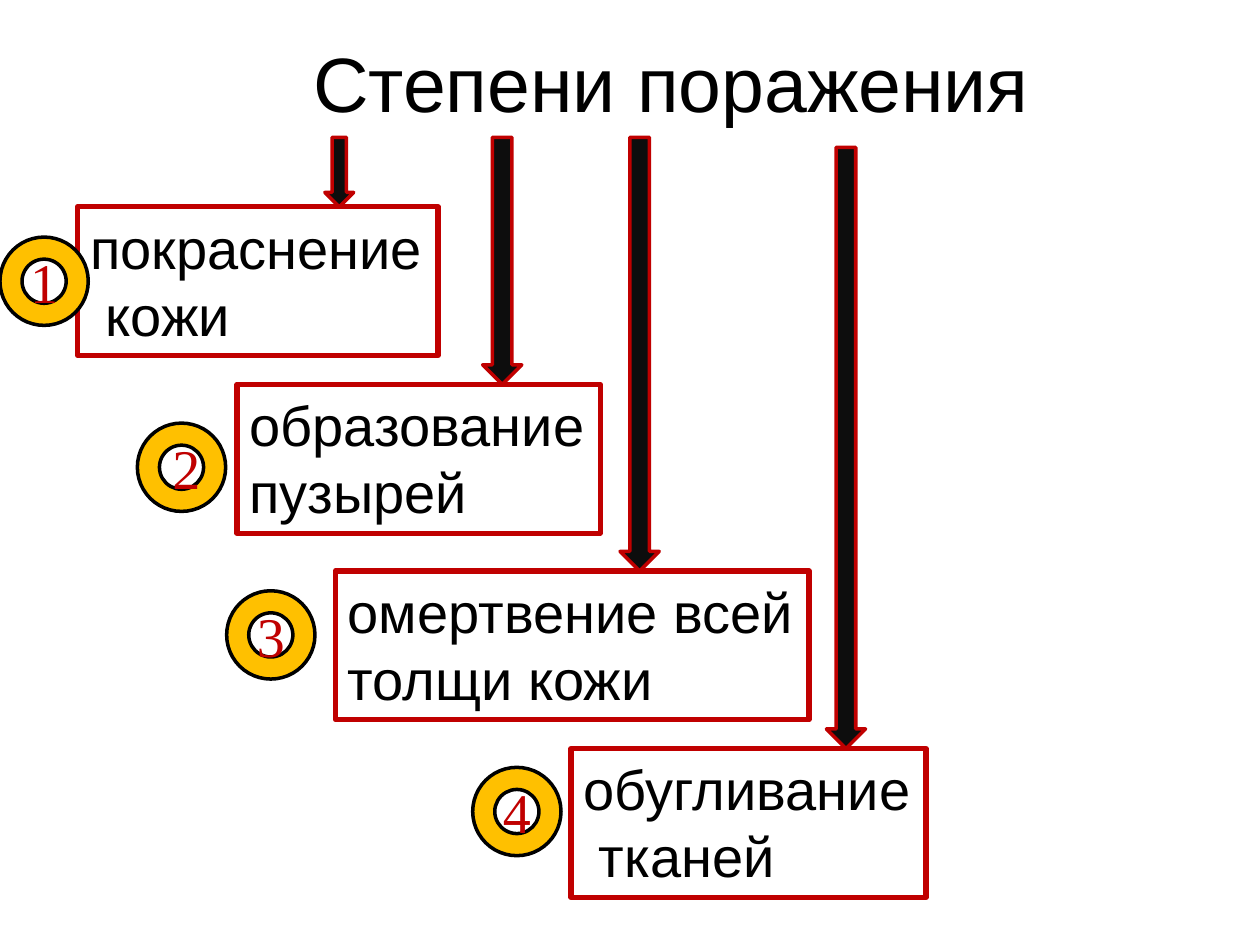
from dataclasses import dataclass

from pptx import Presentation
from pptx.dml.color import RGBColor
from pptx.enum import shapes, text
from pptx.util import Cm, Pt


@dataclass(frozen=True)
class Theme:
    ink: RGBColor = RGBColor(0x00, 0x00, 0x00)
    paper: RGBColor = RGBColor(0xFF, 0xFF, 0xFF)
    accent: RGBColor = RGBColor(0xC0, 0x00, 0x00)
    arrow: RGBColor = RGBColor(0x0D, 0x0D, 0x0D)
    badge: RGBColor = RGBColor(0xFF, 0xC0, 0x00)
    label_font: str = "Arial"
    number_font: str = "Times New Roman"
    title_size: int = 44
    label_size: int = 32


@dataclass(frozen=True)
class Degree:
    lines: tuple[str, str]
    left: float
    top: float
    width: float
    arrow_left: float
    arrow_top: float
    arrow_width: float
    badge_left: float
    badge_top: float
    badge_align: text.PP_ALIGN = text.PP_ALIGN.CENTER


THEME = Theme()
BOX_HEIGHT = 3.0
BADGE_SIZE = 1.78
DEGREES = (
    Degree(("покраснение", " кожи"), 1.57, 4.17, 7.26, 6.55, 2.77, 0.58, 0, 4.78),
    Degree(("образование", "пузырей"), 4.78, 7.75, 7.32, 9.73, 2.77, 0.79, 2.77, 8.53,
           text.PP_ALIGN.RIGHT),
    Degree(("омертвение всей", "толщи кожи"), 6.76, 11.51, 9.55, 12.5, 2.77, 0.79, 4.57, 11.91),
    Degree(("обугливание", " тканей"), 11.51, 15.09, 7.16, 16.66, 2.97, 0.79, 9.53, 15.47),
)


def add_outlined(slide, kind, left: float, top: float, width: float, height: float,
                 fill: RGBColor, line: RGBColor, weight: float):
    shape = slide.shapes.add_shape(kind, Cm(left), Cm(top), Cm(width), Cm(height))
    shape.shadow.inherit = False
    shape.fill.solid()
    shape.fill.fore_color.rgb = fill
    shape.line.color.rgb = line
    shape.line.width = Pt(weight)
    return shape


def format_paragraph(paragraph, font_name: str, size: int, color: RGBColor, align) -> None:
    paragraph.alignment = align
    paragraph.font.name = font_name
    paragraph.font.size = Pt(size)
    paragraph.font.color.rgb = color


def add_title(slide, wording: str) -> None:
    title = slide.shapes.title
    title.left, title.top, title.width, title.height = Cm(5.56), Cm(0.58), Cm(15.95), Cm(2.13)
    title.fill.solid()
    title.fill.fore_color.rgb = THEME.paper
    frame = title.text_frame
    frame.text = wording
    frame.auto_size = text.MSO_AUTO_SIZE.NONE
    frame.vertical_anchor = text.MSO_ANCHOR.TOP
    format_paragraph(frame.paragraphs[0], THEME.label_font, THEME.title_size, THEME.ink,
                     text.PP_ALIGN.CENTER)


def add_box(slide, degree: Degree) -> None:
    box = add_outlined(slide, shapes.MSO_SHAPE.RECTANGLE, degree.left, degree.top,
                       degree.width, BOX_HEIGHT, THEME.paper, THEME.accent, 3)
    frame = box.text_frame
    frame.word_wrap = False
    frame.vertical_anchor = text.MSO_ANCHOR.TOP
    frame.text = "\n".join(degree.lines)
    for paragraph in frame.paragraphs:
        format_paragraph(paragraph, THEME.label_font, THEME.label_size, THEME.ink,
                         text.PP_ALIGN.LEFT)


def add_arrow(slide, degree: Degree) -> None:
    add_outlined(slide, shapes.MSO_SHAPE.DOWN_ARROW, degree.arrow_left, degree.arrow_top,
                 degree.arrow_width, degree.top - degree.arrow_top,
                 THEME.arrow, THEME.accent, 2)


def add_badge(slide, degree: Degree, number: int) -> None:
    badge = add_outlined(slide, shapes.MSO_SHAPE.DONUT, degree.badge_left, degree.badge_top,
                         BADGE_SIZE, BADGE_SIZE, THEME.badge, THEME.ink, 2)
    frame = badge.text_frame
    frame.vertical_anchor = text.MSO_ANCHOR.MIDDLE
    frame.text = str(number)
    format_paragraph(frame.paragraphs[0], THEME.number_font, THEME.label_size, THEME.accent,
                     degree.badge_align)


def main() -> None:
    presentation = Presentation()
    presentation.slide_width, presentation.slide_height = Cm(25.4), Cm(19.05)
    slide = presentation.slides.add_slide(presentation.slide_layouts[5])
    add_title(slide, "Степени поражения")
    for degree in DEGREES:
        add_box(slide, degree)
    for degree in DEGREES:
        add_arrow(slide, degree)
    for number, degree in enumerate(DEGREES, start=1):
        add_badge(slide, degree, number)
    presentation.save("out.pptx")


if __name__ == "__main__":
    main()
